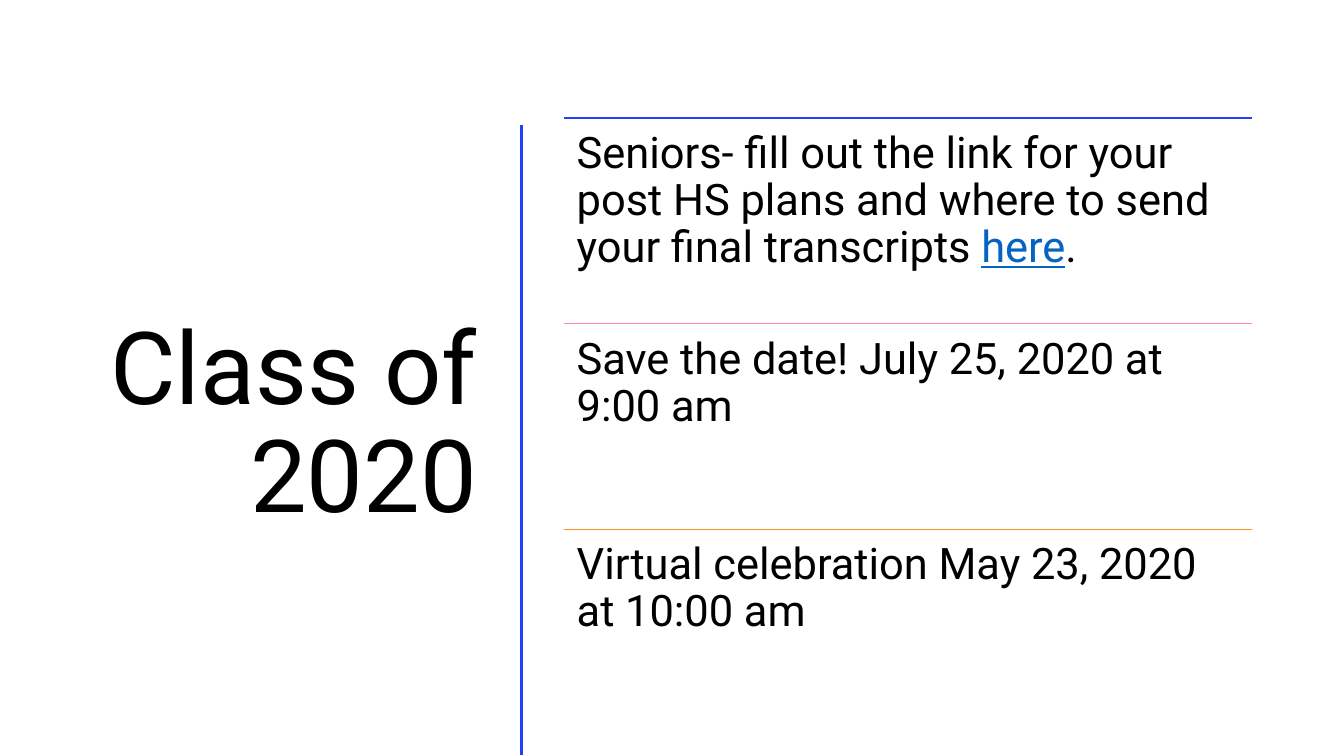
from pptx import Presentation
from pptx.dml.color import RGBColor
from pptx.enum.shapes import MSO_CONNECTOR
from pptx.enum.text import MSO_ANCHOR, MSO_AUTO_SIZE, PP_ALIGN
from pptx.oxml.ns import qn
from pptx.util import Pt
from lxml import etree

STRAIGHT = MSO_CONNECTOR.STRAIGHT
TOP, MIDDLE = MSO_ANCHOR.TOP, MSO_ANCHOR.MIDDLE
LEFT, RIGHT = PP_ALIGN.LEFT, PP_ALIGN.RIGHT
NO_FIT = MSO_AUTO_SIZE.NONE

PX = 9144
THEME = {
    "font": "Roboto",
    "title_size": 72,
    "body_size": 31,
    "text": "000000",
    "link": "0563C1",
    "blue": "243FFF",
    "pink": "FF83B6",
    "orange": "FF9022",
}
LIST_LEFT, LIST_TOP, LIST_WIDTH, ROW_HEIGHT = 559, 117, 683, 204
PADDING = 13

ITEMS = [
    ("blue", [
        ("Seniors- fill out the link for your post HS plans and where to send your final transcripts ", "text"),
        ("here", "link"),
        (".", "text"),
    ]),
    ("pink", [("Save the date! July 25, 2020 at 9:00 am", "text")]),
    ("orange", [("Virtual celebration May 23, 2020 at 10:00 am", "text")]),
]


def add_rule(slide, start, end, color, width):
    line = slide.shapes.add_connector(STRAIGHT, *(length * PX for length in start + end))
    line.line.color.rgb = RGBColor.from_string(THEME[color])
    line.line.width = Pt(width)
    etree.SubElement(line._element.spPr, qn("a:effectLst"))


def write_text(shape, box, runs, size, alignment, frame_format):
    for name, length in zip(("left", "top", "width", "height"), box):
        setattr(shape, name, length * PX)
    frame = shape.text_frame
    for name, value in {"word_wrap": True, "auto_size": NO_FIT, **frame_format}.items():
        setattr(frame, name, value)
    paragraph = frame.paragraphs[0]
    paragraph.alignment = alignment
    paragraph.line_spacing = 0.9
    for text, color in runs:
        run = paragraph.add_run()
        run.text = text
        font_format = {"name": THEME["font"], "size": Pt(size), "underline": color == "link"}
        for name, value in font_format.items():
            setattr(run.font, name, value)
        run.font.color.rgb = RGBColor.from_string(THEME[color])


presentation = Presentation()
presentation.slide_width = 1333 * PX
presentation.slide_height = 750 * PX
slide = presentation.slides.add_slide(presentation.slide_layouts[5])

write_text(slide.shapes.title, (52, 117, 431, 611), [("Class of 2020", "text")],
           THEME["title_size"], RIGHT, {"vertical_anchor": MIDDLE})
add_rule(slide, (517, 124), (517, 749), "blue", 2)

item_format = {f"margin_{side}": PADDING * PX for side in ("left", "top", "right", "bottom")}
item_format["vertical_anchor"] = TOP
for index, (color, runs) in enumerate(ITEMS):
    top = LIST_TOP + index * ROW_HEIGHT
    add_rule(slide, (LIST_LEFT, top), (LIST_LEFT + LIST_WIDTH, top), color, 1)
    box = (LIST_LEFT, top, LIST_WIDTH, ROW_HEIGHT)
    textbox = slide.shapes.add_textbox(0, 0, 0, 0)
    write_text(textbox, box, runs, THEME["body_size"], LEFT, item_format)

presentation.save("out.pptx")
